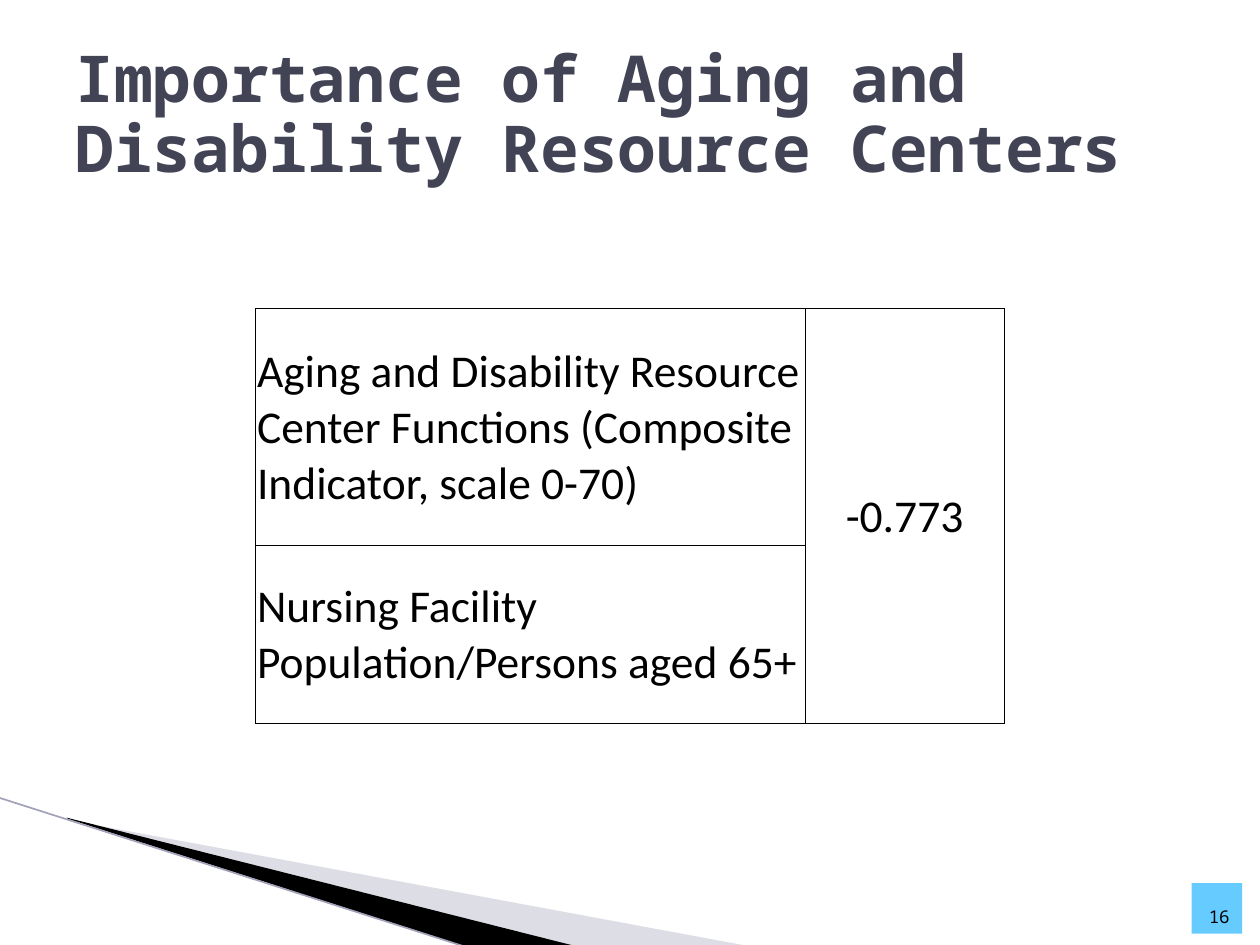
"""Build the slide on the importance of Aging and Disability Resource Centers."""
from lxml import etree
from pptx import Presentation
from pptx.dml.color import RGBColor
from pptx.enum.shapes import MSO_CONNECTOR, MSO_SHAPE
from pptx.enum.text import MSO_ANCHOR, PP_ALIGN
from pptx.oxml.ns import qn
from pptx.util import Pt

STRAIGHT = MSO_CONNECTOR.STRAIGHT
RECTANGLE = MSO_SHAPE.RECTANGLE
MIDDLE, BOTTOM = MSO_ANCHOR.MIDDLE, MSO_ANCHOR.BOTTOM
LEFT, CENTER, RIGHT = PP_ALIGN.LEFT, PP_ALIGN.CENTER, PP_ALIGN.RIGHT
MONO, SANS = "Noto Sans Mono", "Calibri"
COLORS = {
    "title": "424456",
    "ink": "000000",
    "light_wedge": "AAAABF",
    "dark_wedge": "000000",
    "edge": "A1A1B9",
    "badge": "66CCFF",
}


def rgb(name):
    return RGBColor.from_string(COLORS[name])


def write(frame, text, size, font, color="ink", align=LEFT, bold=False):
    paragraph = frame.paragraphs[0]
    paragraph.alignment = align
    run = paragraph.add_run()
    run.text = text
    run.font.size = Pt(size)
    run.font.name = font
    run.font.bold = bold
    run.font.color.rgb = rgb(color)
    return paragraph


def add_wedge(slide, points, color, opacity=100):
    corners = [(Pt(x), Pt(y)) for x, y in points]
    builder = slide.shapes.build_freeform(*corners[0])
    builder.add_line_segments(corners[1:], close=True)
    wedge = builder.convert_to_shape()
    wedge.shadow.inherit = False
    wedge.fill.solid()
    wedge.fill.fore_color.rgb = rgb(color)
    wedge.line.fill.background()
    if opacity < 100:
        fill_color = wedge.fill._xPr.find(qn("a:solidFill"))[0]
        etree.SubElement(fill_color, qn("a:alpha"), val=str(opacity * 1000))


def add_edge(slide, start, end):
    ends = [Pt(value) for value in (*start, *end)]
    edge = slide.shapes.add_connector(STRAIGHT, *ends)
    edge.line.color.rgb = rgb("edge")
    edge.line.width = Pt(0.95)
    etree.SubElement(edge._element.spPr, qn("a:effectLst"))


def add_title(slide, text):
    title = slide.shapes.add_textbox(Pt(36), Pt(21.6), Pt(648), Pt(90))
    frame = title.text_frame
    frame.word_wrap = True
    frame.vertical_anchor = MIDDLE
    heading = write(frame, text, 36.9, MONO, "title", bold=True)
    heading.line_spacing = 0.9


def add_page_badge(slide, number):
    badge = slide.shapes.add_shape(RECTANGLE, Pt(681), Pt(504.7), Pt(28.8), Pt(28.8))
    badge.shadow.inherit = False
    badge.fill.solid()
    badge.fill.fore_color.rgb = rgb("badge")
    badge.line.fill.background()
    badge.text_frame.vertical_anchor = BOTTOM
    badge.text_frame.word_wrap = False
    write(badge.text_frame, number, 10, MONO, align=RIGHT)


def outline_cell(cell):
    properties = cell._tc.get_or_add_tcPr()
    for side in ("a:lnL", "a:lnR", "a:lnT", "a:lnB"):
        border = etree.SubElement(properties, qn(side), w=str(Pt(0.5)))
        fill = etree.SubElement(border, qn("a:solidFill"))
        etree.SubElement(fill, qn("a:srgbClr"), val=COLORS["ink"])
    cell.fill.background()


def fill_cell(cell, text, align=LEFT):
    cell.margin_left = cell.margin_right = cell.margin_top = Pt(0.7)
    cell.margin_bottom = 0
    cell.vertical_anchor = MIDDLE
    write(cell.text_frame, text, 26, SANS, align=align)


def add_correlation_table(slide, measures, correlation):
    widths, heights = (313.9, 113.8), (135.4, 101.5)
    table = slide.shapes.add_table(
        len(heights), len(widths), Pt(146.2), Pt(176.4),
        Pt(sum(widths)), Pt(sum(heights))).table
    table.first_row = table.horz_banding = False
    for column, width in zip(table.columns, widths):
        column.width = Pt(width)
    for row, height in zip(table.rows, heights):
        row.height = Pt(height)
    for cell in table.iter_cells():
        outline_cell(cell)
    for index, measure in enumerate(measures):
        fill_cell(table.cell(index, 0), measure)
    table.cell(0, 1).merge(table.cell(len(heights) - 1, 1))
    fill_cell(table.cell(0, 1), correlation, CENTER)


def main():
    deck = Presentation()
    deck.slide_width, deck.slide_height = Pt(720), Pt(540)
    slide = deck.slides.add_slide(deck.slide_layouts[6])
    add_wedge(slide, [(39.6, 468.7), (428.4, 540.7), (328.3, 540.7), (39.6, 468)],
              "light_wedge", opacity=40)
    add_wedge(slide, [(38.2, 467.3), (329, 540.7), (267.8, 541.4), (38.9, 468)],
              "dark_wedge")
    add_edge(slide, (-0.7, 455.8), (267.1, 541.4))
    add_title(slide, "Importance of Aging and Disability Resource Centers")
    add_page_badge(slide, "16")
    add_correlation_table(
        slide,
        ["Aging and Disability Resource Center Functions "
         "(Composite Indicator, scale 0-70)",
         "Nursing Facility Population/Persons aged 65+"],
        "-0.773")
    deck.save("out.pptx")


if __name__ == "__main__":
    main()
